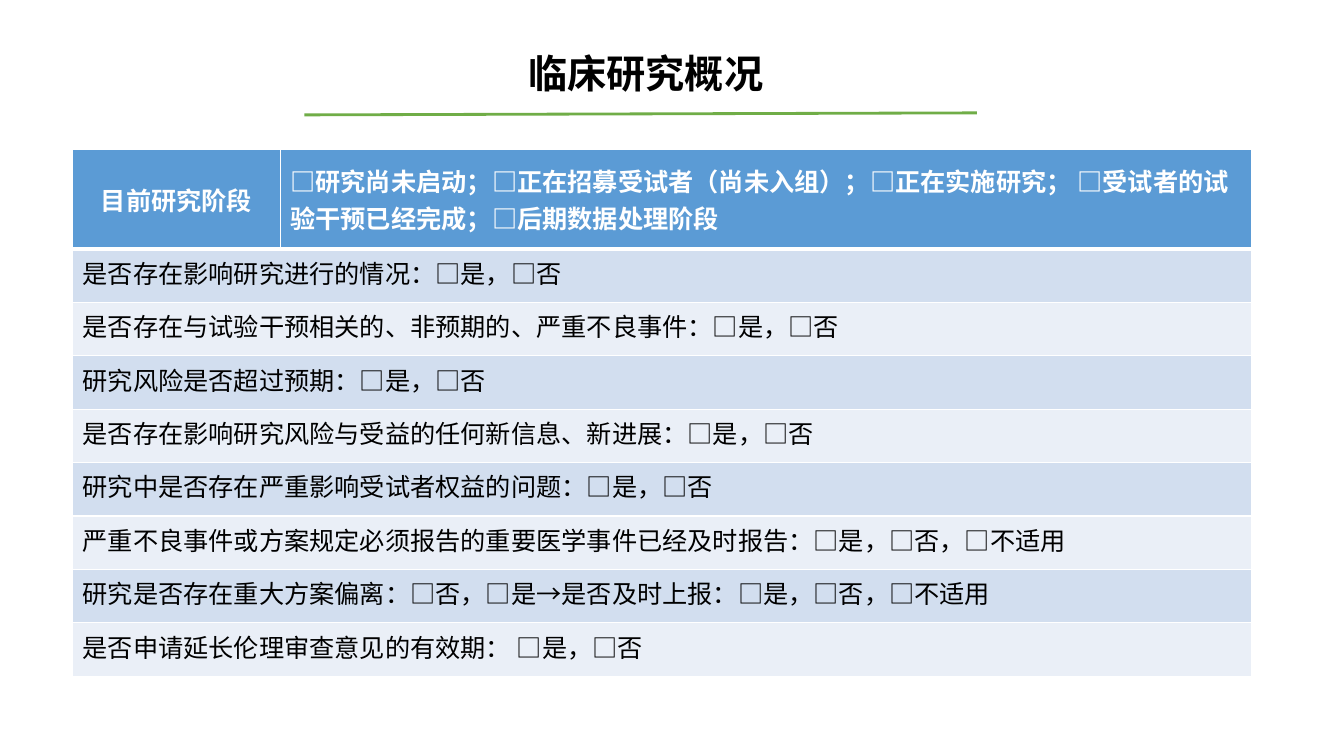
"""Build the clinical study overview slide."""
from dataclasses import dataclass

from lxml import etree
from pptx import Presentation
from pptx.dml.color import RGBColor
from pptx.enum import shapes, text
from pptx.oxml import ns
from pptx.util import Inches, Pt


@dataclass(frozen=True)
class Theme:
    """Colours, fonts and type sizes of the slide."""
    ink: str = "000000"
    white: str = "FFFFFF"
    rule: str = "70AD47"
    header: str = "5B9BD5"
    bands: tuple = ("D2DEEF", "EAEFF7")
    latin: str = "Calibri"
    chinese: str = "Noto Sans CJK SC"
    title_size: int = 28
    body_size: int = 18


THEME = Theme()
STAGE_LABEL = "目前研究阶段"
STAGE_OPTIONS = "□研究尚未启动；□正在招募受试者（尚未入组）；□正在实施研究； □受试者的试验干预已经完成；□后期数据处理阶段"
QUESTIONS = (
    "是否存在影响研究进行的情况：□是，□否",
    "是否存在与试验干预相关的、非预期的、严重不良事件：□是，□否",
    "研究风险是否超过预期：□是，□否",
    "是否存在影响研究风险与受益的任何新信息、新进展：□是，□否",
    "研究中是否存在严重影响受试者权益的问题：□是，□否",
    "严重不良事件或方案规定必须报告的重要医学事件已经及时报告：□是，□否，□不适用",
    "研究是否存在重大方案偏离：□否，□是→是否及时上报：□是，□否，□不适用",
    "是否申请延长伦理审查意见的有效期： □是，□否",
)


def write_text(frame, content, size=THEME.body_size, color=THEME.ink,
               font=THEME.latin, bold=False, align=text.PP_ALIGN.LEFT):
    """Write one formatted paragraph into a text frame."""
    frame.word_wrap = True
    paragraph = frame.paragraphs[0]
    paragraph.alignment = align
    run = paragraph.add_run()
    run.text = content
    run.font.size = Pt(size)
    run.font.bold = bold
    run.font.name = font
    run.font.color.rgb = RGBColor.from_string(color)
    east_asian = etree.SubElement(run.font._element, ns.qn("a:ea"))
    east_asian.set("typeface", THEME.chinese)


def add_title(slide, content):
    """Add the slide title."""
    box = slide.shapes.add_textbox(Inches(5.11), Inches(0.42), Inches(7.84), Inches(0.61))
    frame = box.text_frame
    frame.margin_left = frame.margin_right = Inches(0.13)
    frame.margin_top = frame.margin_bottom = Inches(0.07)
    write_text(frame, content, size=THEME.title_size, font=THEME.chinese, bold=True)


def add_rule(slide):
    """Add the green line under the title."""
    rule = slide.shapes.add_connector(
        shapes.MSO_CONNECTOR.STRAIGHT, Inches(3.02), Inches(1.14), Inches(9.69), Inches(1.12))
    rule.line.color.rgb = RGBColor.from_string(THEME.rule)
    rule.line.width = Pt(2)
    etree.SubElement(rule._element.spPr, ns.qn("a:effectLst"))


def style_cell(cell, fill, top=1, bottom=1):
    """Give a cell its fill and white borders."""
    cell.fill.solid()
    cell.fill.fore_color.rgb = RGBColor.from_string(fill)
    properties = cell._tc.get_or_add_tcPr()
    widths = {"lnL": 1, "lnR": 1, "lnT": top, "lnB": bottom}
    for index, (side, width) in enumerate(widths.items()):
        border = etree.Element(ns.qn(f"a:{side}"), w=str(Pt(width)))
        solid = etree.SubElement(border, ns.qn("a:solidFill"))
        etree.SubElement(solid, ns.qn("a:srgbClr"), val=THEME.white)
        properties.insert(index, border)


def add_overview_table(slide):
    """Add the stage header and the banded question rows."""
    column_widths = (2.06, 9.63)
    row_heights = [0.99] + [0.53] * len(QUESTIONS)
    table = slide.shapes.add_table(
        len(row_heights), len(column_widths), Inches(0.72), Inches(1.48),
        Inches(sum(column_widths)), Inches(sum(row_heights))).table
    for column, width in zip(table.columns, column_widths):
        column.width = Inches(width)
    for row, height in zip(table.rows, row_heights):
        row.height = Inches(height)

    header = ((STAGE_LABEL, text.PP_ALIGN.CENTER), (STAGE_OPTIONS, text.PP_ALIGN.LEFT))
    for cell, (content, align) in zip(table.rows[0].cells, header):
        style_cell(cell, THEME.header, bottom=3)
        cell.vertical_anchor = text.MSO_ANCHOR.MIDDLE
        write_text(cell.text_frame, content, color=THEME.white, bold=True, align=align)

    for index, question in enumerate(QUESTIONS):
        first, last = table.rows[index + 1].cells
        for cell in (first, last):
            style_cell(cell, THEME.bands[index % 2], top=1 if index else 3)
        first.merge(last)
        write_text(first.text_frame, question)


def main():
    """Build and save the presentation."""
    presentation = Presentation()
    presentation.slide_width = Inches(13.33)
    presentation.slide_height = Inches(7.5)
    slide = presentation.slides.add_slide(presentation.slide_layouts[6])
    add_rule(slide)
    add_title(slide, "临床研究概况")
    add_overview_table(slide)
    presentation.save("out.pptx")


if __name__ == "__main__":
    main()
